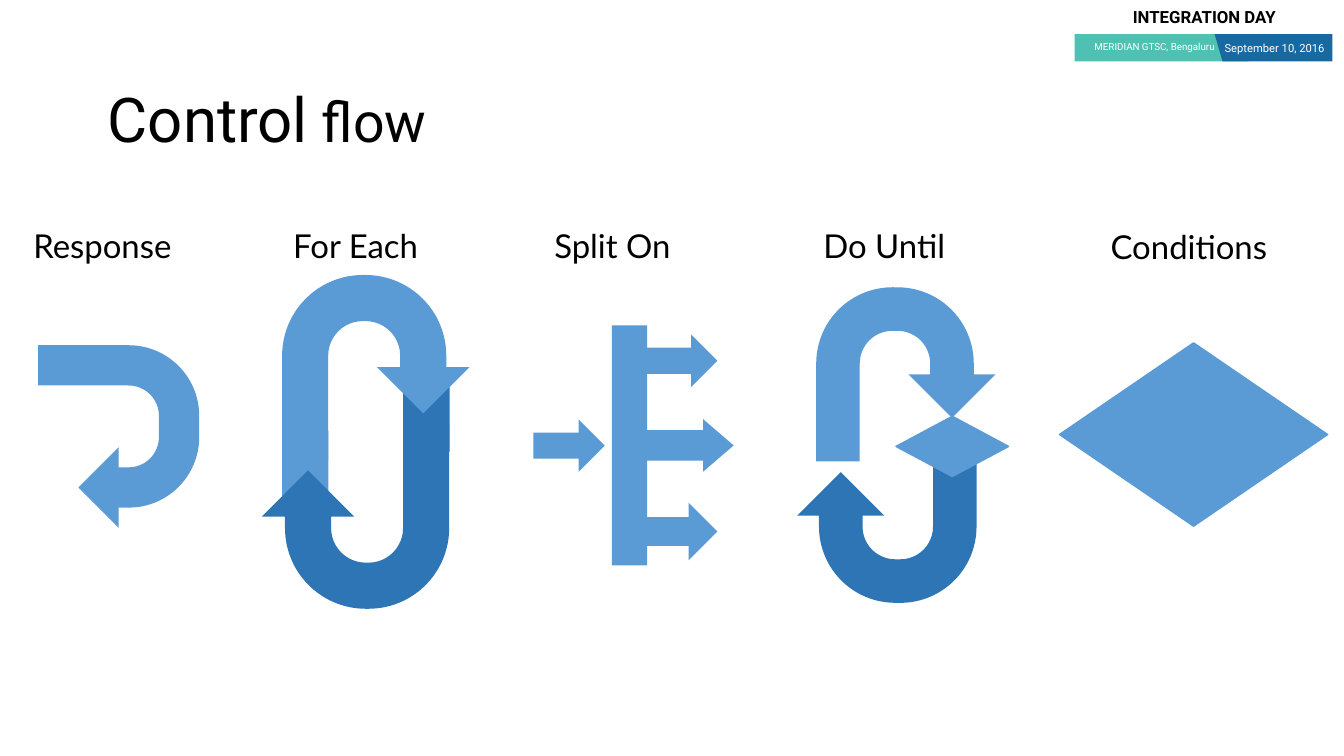
from pptx import Presentation
from pptx.dml.color import RGBColor
from pptx.enum.shapes import MSO_SHAPE as Kind
from pptx.enum.text import MSO_ANCHOR, PP_ALIGN
from pptx.util import Cm, Pt

BLUE, DARK, BLACK, WHITE = "5B9BD5", "2E75B6", "000000", "FFFFFF"
TEAL, NAVY = "4EC1B2", "1969A1"
UTURN, ARROW = Kind.U_TURN_ARROW, Kind.RIGHT_ARROW

TITLE = [("Control", 44.1), (" flow", 39.6)]
BANNER = [
    ("INTEGRATION DAY", (28.3, 0.05, 4.6, 0.76), 12, BLACK, True, PP_ALIGN.LEFT),
    ("MERIDIAN GTSC, Bengaluru", (26.82, 0.91, 4.04, 0.58), 7, WHITE, False, PP_ALIGN.RIGHT),
    ("September 10, 2016", (30.61, 0.91, 3.25, 0.61), 8, WHITE, False, PP_ALIGN.LEFT),
]
SLANT = [(30.61, 0.86), (30.81, 1.55), (33.58, 1.55), (33.58, 0.86)]
LABELS = [
    ("Response", 0.33, 5.38),
    ("For Each", 6.88, 5.38),
    ("Split On", 13.46, 5.38),
    ("Do Until", 20.24, 5.38),
    ("Conditions", 27.48, 5.41),
]
SHAPES = [
    (UTURN, (0.69, 8.97, 4.6, 4.06), BLUE, 90),
    (Kind.RIGHT_ARROW_CALLOUT, (15.42, 8.2, 3.07, 6.05), BLUE, 0),
    (ARROW, (16.28, 8.43, 1.8, 1.32), BLUE, 0),
    (ARROW, (16.28, 12.67, 1.8, 1.45), BLUE, 0),
    (ARROW, (13.44, 10.57, 1.8, 1.32), BLUE, 0),
    (UTURN, (20.57, 7.24, 4.52, 4.39), BLUE, 0),
    (UTURN, (20.09, 10.8, 4.52, 4.39), DARK, 180),
    (Kind.DIAMOND, (26.7, 8.64, 6.76, 4.62), BLUE, 0),
    (Kind.RECTANGLE, (10.16, 9.73, 1.17, 1.65), DARK, 0),
    (Kind.RECTANGLE, (7.11, 10.85, 1.17, 1.65), BLUE, 0),
    (UTURN, (7.11, 6.93, 4.72, 4.65), BLUE, 0),
    (UTURN, (6.6, 10.69, 4.72, 4.65), DARK, 180),
    (Kind.DIAMOND, (22.58, 10.49, 2.84, 1.52), BLUE, 0),
]
ADJUST = {Kind.RIGHT_ARROW_CALLOUT: (0.25, 0.215, 0.25, 0.29)}


def color(code):
    return RGBColor.from_string(code)


def paint(shape, code):
    shape.shadow.inherit = False
    shape.fill.solid()
    shape.fill.fore_color.rgb = color(code)
    shape.line.fill.background()


def draw(slide, kind, box, code, turn=0):
    shape = slide.shapes.add_shape(kind, *map(Cm, box))
    paint(shape, code)
    shape.rotation = turn
    for spot, value in enumerate(ADJUST.get(kind, ())):
        shape.adjustments[spot] = value
    if kind == Kind.DIAMOND:
        shape.line.color.rgb = color(code)
        shape.line.width = Pt(1)


def write(slide, text, box, face, size, code, bold=False, align=PP_ALIGN.LEFT):
    frame = slide.shapes.add_textbox(*map(Cm, box)).text_frame
    frame.word_wrap = True
    para = frame.paragraphs[0]
    para.text = text
    para.alignment = align
    font = para.font
    font.name, font.size, font.bold = face, Pt(size), bold
    font.color.rgb = color(code)
    return frame


def head(slide):
    title = slide.shapes.title
    title.left, title.top, title.width, title.height = map(Cm, (2.46, 2.13, 19.18, 1.93))
    frame = title.text_frame
    frame.vertical_anchor = MSO_ANCHOR.MIDDLE
    para = frame.paragraphs[0]
    para.alignment = PP_ALIGN.LEFT
    para.line_spacing = 0.9
    para.font.name = "Roboto"
    para.font.color.rgb = color(BLACK)
    for text, size in TITLE:
        run = para.add_run()
        run.text = text
        run.font.size = Pt(size)


def banner(slide):
    draw(slide, Kind.RECTANGLE, (27.08, 0.86, 4.39, 0.69), TEAL)
    first, *rest = [(Cm(x), Cm(y)) for x, y in SLANT]
    form = slide.shapes.build_freeform(*first)
    form.add_line_segments(rest, close=True)
    paint(form.convert_to_shape(), NAVY)
    for text, box, size, code, bold, align in BANNER:
        write(slide, text, box, "Roboto", size, code, bold, align)


def label(slide, text, left, top):
    frame = write(slide, text, (left, top, 5.18, 1.7), "Lato", 23.5, BLACK)
    frame.margin_left = frame.margin_right = Cm(0.51)
    frame.margin_top = frame.margin_bottom = Cm(0.41)
    para = frame.paragraphs[0]
    para.line_spacing = 0.9
    para.space_after = Pt(5.9)


def main():
    deck = Presentation()
    deck.slide_width, deck.slide_height = Cm(33.87), Cm(19.05)
    slide = deck.slides.add_slide(deck.slide_layouts[5])
    banner(slide)
    head(slide)
    for item in SHAPES:
        draw(slide, *item)
    for item in LABELS:
        label(slide, *item)
    deck.save("out.pptx")


if __name__ == "__main__":
    main()
